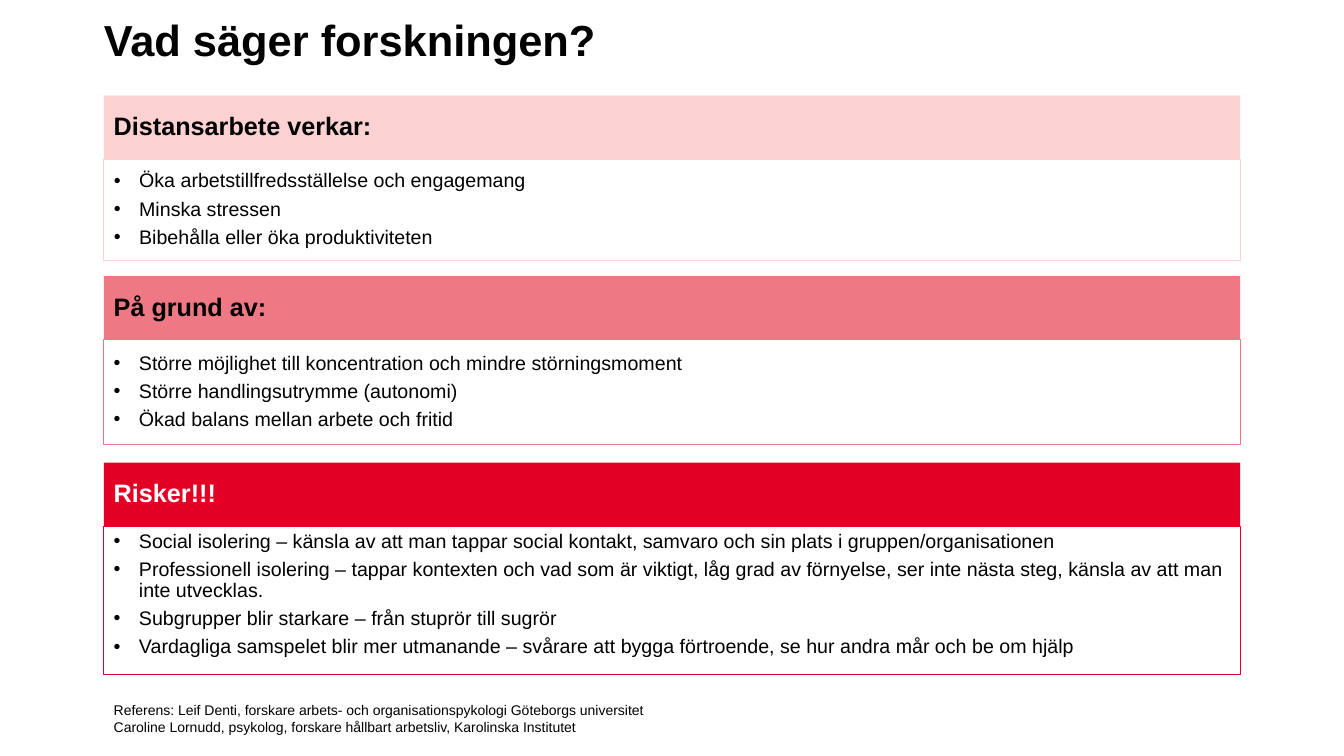
"""Builds a slide with three headed lists on research about remote work."""
from lxml import etree
from pptx import Presentation
from pptx.dml.color import RGBColor
from pptx.enum.shapes import MSO_SHAPE
from pptx.enum.text import MSO_ANCHOR, MSO_AUTO_SIZE, PP_ALIGN
from pptx.oxml.ns import qn
from pptx.util import Inches, Pt

RECT = MSO_SHAPE.RECTANGLE
TOP, MIDDLE, BOTTOM = MSO_ANCHOR.TOP, MSO_ANCHOR.MIDDLE, MSO_ANCHOR.BOTTOM
LEFT_ALIGN = PP_ALIGN.LEFT
NO_FIT = MSO_AUTO_SIZE.NONE
LEFT, WIDTH, BAND_H = 1.03, 11.27, 0.63

SECTIONS = [
    (0.95, 1.0, "FBD1D1", "000000", MIDDLE, "Distansarbete verkar:", [
        "Öka arbetstillfredsställelse och engagemang",
        "Minska stressen",
        "Bibehålla eller öka produktiviteten"]),
    (2.74, 1.04, "EE7884", "000000", MIDDLE, "På grund av:", [
        "Större möjlighet till koncentration och mindre störningsmoment",
        "Större handlingsutrymme (autonomi)",
        "Ökad balans mellan arbete och fritid"]),
    (4.59, 1.47, "E20025", "FFFFFF", TOP, "Risker!!!", [
        "Social isolering – känsla av att man tappar social kontakt, samvaro "
        "och sin plats i gruppen/organisationen",
        "Professionell isolering – tappar kontexten och vad som är viktigt, låg grad "
        "av förnyelse, ser inte nästa steg, känsla av att man inte utvecklas.",
        "Subgrupper blir starkare – från stuprör till sugrör",
        "Vardagliga samspelet blir mer utmanande – svårare att bygga förtroende, "
        "se hur andra mår och be om hjälp"]),
]
REFERENCES = [
    "Referens: Leif Denti, forskare arbets- och organisationspykologi Göteborgs universitet",
    "Caroline Lornudd, psykolog, forskare hållbart arbetsliv, Karolinska Institutet",
]


def rgb(value):
    return RGBColor.from_string(value)


def write(sp, box, lines, size, color="000000", bold=False, anchor=MIDDLE,
          spacing=0.9, bullets=False):
    sp.left, sp.top, sp.width, sp.height = [Inches(v) for v in box]
    tf = sp.text_frame
    tf.word_wrap, tf.auto_size, tf.vertical_anchor = True, NO_FIT, anchor
    tf.text = "\n".join(lines)
    for i, p in enumerate(tf.paragraphs):
        if bullets:
            pPr = p._p.get_or_add_pPr()
            pPr.set("marL", str(Inches(0.25)))
            pPr.set("indent", str(-Inches(0.25)))
            etree.SubElement(pPr, qn("a:buFont")).set("typeface", "Arial")
            etree.SubElement(pPr, qn("a:buChar")).set("char", "•")
        p.alignment, p.line_spacing = LEFT_ALIGN, spacing
        p.space_before = Pt(5 if bullets and i else 0)
        for r in p.runs:
            r.font.name, r.font.size, r.font.bold = "Arial", Pt(size), bold
            r.font.color.rgb = rgb(color)


prs = Presentation()
prs.slide_width, prs.slide_height = Inches(13.33), Inches(7.5)
slide = prs.slides.add_slide(prs.slide_layouts[1])
shapes = slide.shapes

write(shapes.title, (0.93, 0.2, 10.38, 0.48), ["Vad säger forskningen?"], 31,
      bold=True, anchor=BOTTOM, spacing=0.7)

for n, (top, height, fill, color, anchor, heading, items) in enumerate(SECTIONS):
    band = shapes.add_shape(RECT, 0, 0, 0, 0)
    band.shadow.inherit = False
    band.fill.solid()
    band.fill.fore_color.rgb = rgb(fill)
    band.line.fill.background()
    write(band, (LEFT, top, WIDTH, BAND_H), [heading], 18, color, bold=True)

    if n == 0:
        panel = slide.placeholders[1]
    else:
        panel = shapes.add_shape(RECT, 0, 0, 0, 0)
        panel.shadow.inherit = False
    panel.fill.solid()
    panel.fill.fore_color.rgb = rgb("FFFFFF")
    panel.line.color.rgb = rgb(fill)
    panel.line.width = Pt(0.75)
    write(panel, (LEFT, top + BAND_H, WIDTH, height), items, 14,
          anchor=anchor, bullets=True)

source = shapes.add_textbox(0, 0, 0, 0)
write(source, (LEFT, 6.91, 6.67, 0.44), REFERENCES, 10, anchor=TOP, spacing=1.0)

prs.save("out.pptx")
